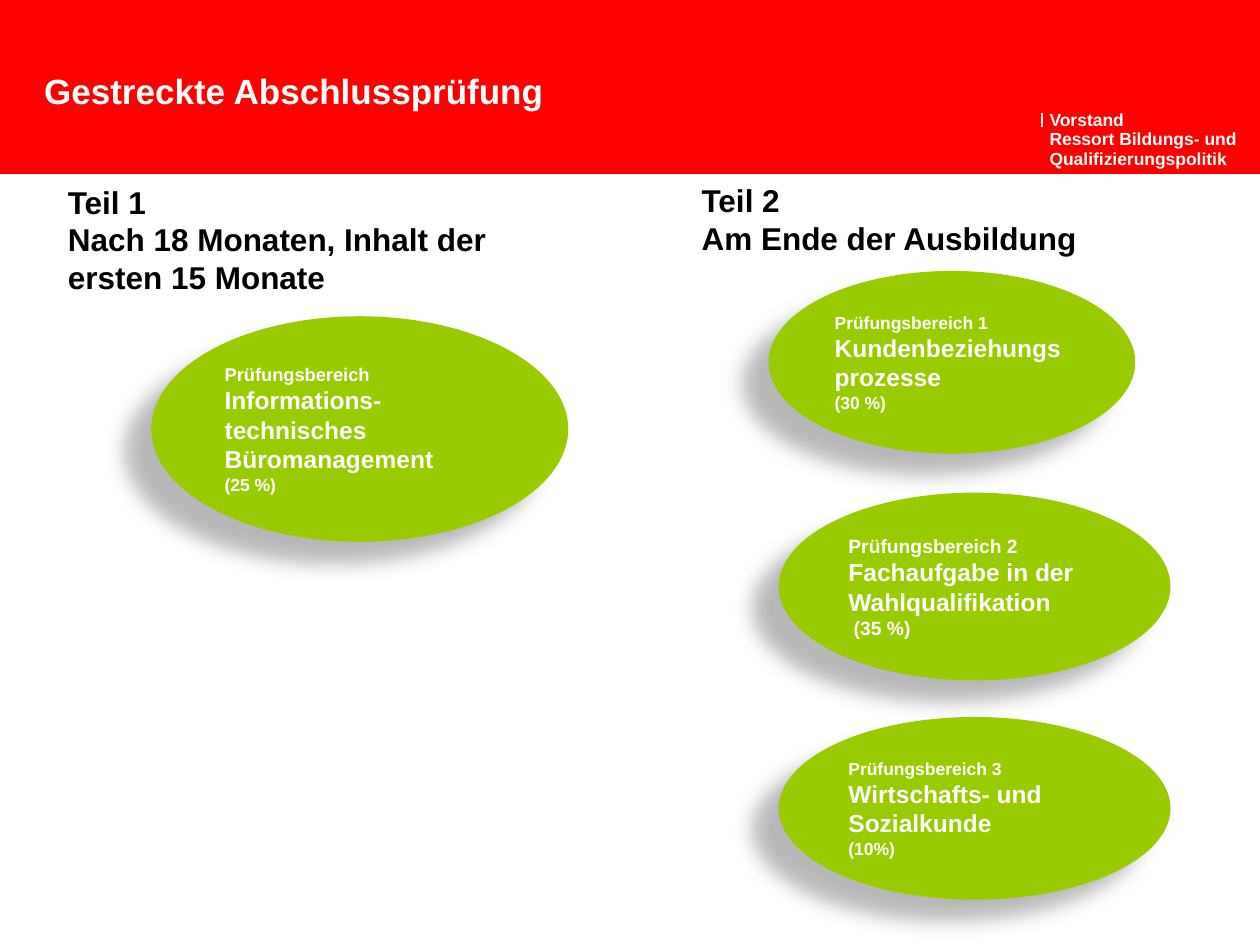
from lxml import etree
from pptx import Presentation
from pptx.dml.color import RGBColor
from pptx.enum import shapes, text
from pptx.oxml import ns
from pptx.util import Emu, Inches, Pt

COLORS = {"banner": "FF0000", "oval": "99CC00", "light": "FFFFFF", "dark": "000000"}
FONT = "Arial"
COLUMNS, ROWS = 100, 75

PARTS = [
    {
        "box": (4.4, 14, 40.9, 61),
        "heading": ["Teil 1", "Nach 18 Monaten, Inhalt der ersten 15 Monate"],
        "heading_rows": 10.1,
        "exams": [
            ((7.6, 11.1, 33.1, 17.9), "Prüfungsbereich",
             "Informations-technisches Büromanagement", "(25 %)", 10.5, 10),
        ],
    },
    {
        "box": (54.7, 13.9, 40.9, 61.1),
        "heading": ["Teil 2", "Am Ende der Ausbildung"],
        "heading_rows": 7.1,
        "exams": [
            ((6.3, 7.6, 29.1, 14.5), "Prüfungsbereich 1",
             "Kundenbeziehungsprozesse", "(30 %)", 10, 10),
            ((7.1, 25.2, 31.1, 14.9), "Prüfungsbereich 2",
             "Fachaufgabe in der Wahlqualifikation", " (35 %)", 11, 11),
            ((7.1, 43, 31.1, 14.5), "Prüfungsbereich 3",
             "Wirtschafts- und Sozialkunde", "(10%)", 10, 10),
        ],
    },
]


def color(name):
    return RGBColor.from_string(COLORS[name])


def place(presentation, outer, inner):
    column, row = presentation.slide_width / COLUMNS, presentation.slide_height / ROWS
    left, top, width, height = inner
    return (Emu(round((outer[0] + left) * column)), Emu(round((outer[1] + top) * row)),
            Emu(round(width * column)), Emu(round(height * row)))


def prepare_frame(shape, margins=(0.1, 0.05), anchor=text.MSO_ANCHOR.TOP):
    frame = shape.text_frame
    frame.word_wrap = True
    frame.auto_size = text.MSO_AUTO_SIZE.NONE
    frame.vertical_anchor = anchor
    frame.margin_left = frame.margin_right = Inches(margins[0])
    frame.margin_top = frame.margin_bottom = Inches(margins[1])
    return frame


def add_run(paragraph, words, size, tint):
    run = paragraph.add_run()
    run.text = words
    run.font.name = FONT
    run.font.size = Pt(size)
    run.font.bold = True
    run.font.color.rgb = color(tint)


def add_lines(frame, lines, size, tint, spacing=None):
    for index, words in enumerate(lines):
        paragraph = frame.add_paragraph() if index else frame.paragraphs[0]
        paragraph.alignment = text.PP_ALIGN.LEFT
        if spacing:
            paragraph.line_spacing = Pt(spacing)
        add_run(paragraph, words, size, tint)


def add_effects(shape):
    return etree.SubElement(shape._element.spPr, ns.qn("a:effectLst"))


def cast_shadow(shape):
    shadow = etree.SubElement(
        add_effects(shape), ns.qn("a:outerShdw"),
        blurRad=str(Pt(11.8)), dist=str(Pt(19.7)), dir=str(141 * 60000),
        algn="ctr", rotWithShape="0")
    tone = etree.SubElement(shadow, ns.qn("a:srgbClr"), val=COLORS["dark"])
    etree.SubElement(tone, ns.qn("a:alpha"), val="28000")


def add_filled(presentation, slide, kind, outer, inner, fill):
    shape = slide.shapes.add_shape(kind, *place(presentation, outer, inner))
    shape.fill.solid()
    shape.fill.fore_color.rgb = color(fill)
    shape.line.fill.background()
    return shape


def build_header(presentation, slide, box):
    banner = add_filled(presentation, slide, shapes.MSO_SHAPE.RECTANGLE,
                        box, (0, 0, box[2], box[3]), "banner")
    banner.shadow.inherit = False
    slide.shapes._spTree.insert(2, banner._element)

    left, top, _, height = place(presentation, box, (82.7, 9, 0, 1.1))
    tick = slide.shapes.add_connector(shapes.MSO_CONNECTOR.STRAIGHT,
                                      left, top, left, top + height)
    tick.line.color.rgb = color("light")
    tick.line.width = Pt(0.8)
    add_effects(tick)

    department = slide.shapes.add_textbox(*place(presentation, box, (83.3, 8.8, 16.7, 4.6)))
    add_lines(prepare_frame(department, (0, 0)),
              ["Vorstand", "Ressort Bildungs- und", "Qualifizierungspolitik"],
              10, "light", 11)

    title = slide.shapes.title
    title.left, title.top, title.width, title.height = place(
        presentation, box, (3.5, 5.2, 70.9, 3.4))
    add_lines(prepare_frame(title, (0, 0)), ["Gestreckte Abschlussprüfung"], 20, "light", 26)


def build_exam(presentation, slide, box, exam):
    inner, label, subject, weight, label_size, weight_size = exam
    oval = add_filled(presentation, slide, shapes.MSO_SHAPE.OVAL, box, inner, "oval")
    cast_shadow(oval)
    frame = prepare_frame(oval, anchor=text.MSO_ANCHOR.MIDDLE)
    add_lines(frame, [label], label_size, "light")
    paragraph = frame.add_paragraph()
    paragraph.alignment = text.PP_ALIGN.LEFT
    add_run(paragraph, subject, 14, "light")
    paragraph.add_line_break()
    add_run(paragraph, weight, weight_size, "light")


def build_part(presentation, slide, part):
    box = part["box"]
    heading = slide.shapes.add_textbox(
        *place(presentation, box, (0, 0, box[2], part["heading_rows"])))
    add_lines(prepare_frame(heading), part["heading"], 18, "dark")
    for exam in part["exams"]:
        build_exam(presentation, slide, box, exam)


def main():
    presentation = Presentation()
    presentation.slide_width, presentation.slide_height = Inches(10), Inches(7.5)
    slide = presentation.slides.add_slide(presentation.slide_layouts[5])
    build_header(presentation, slide, (0, 0, COLUMNS, 13.8))
    for part in PARTS:
        build_part(presentation, slide, part)
    presentation.save("out.pptx")


if __name__ == "__main__":
    main()
